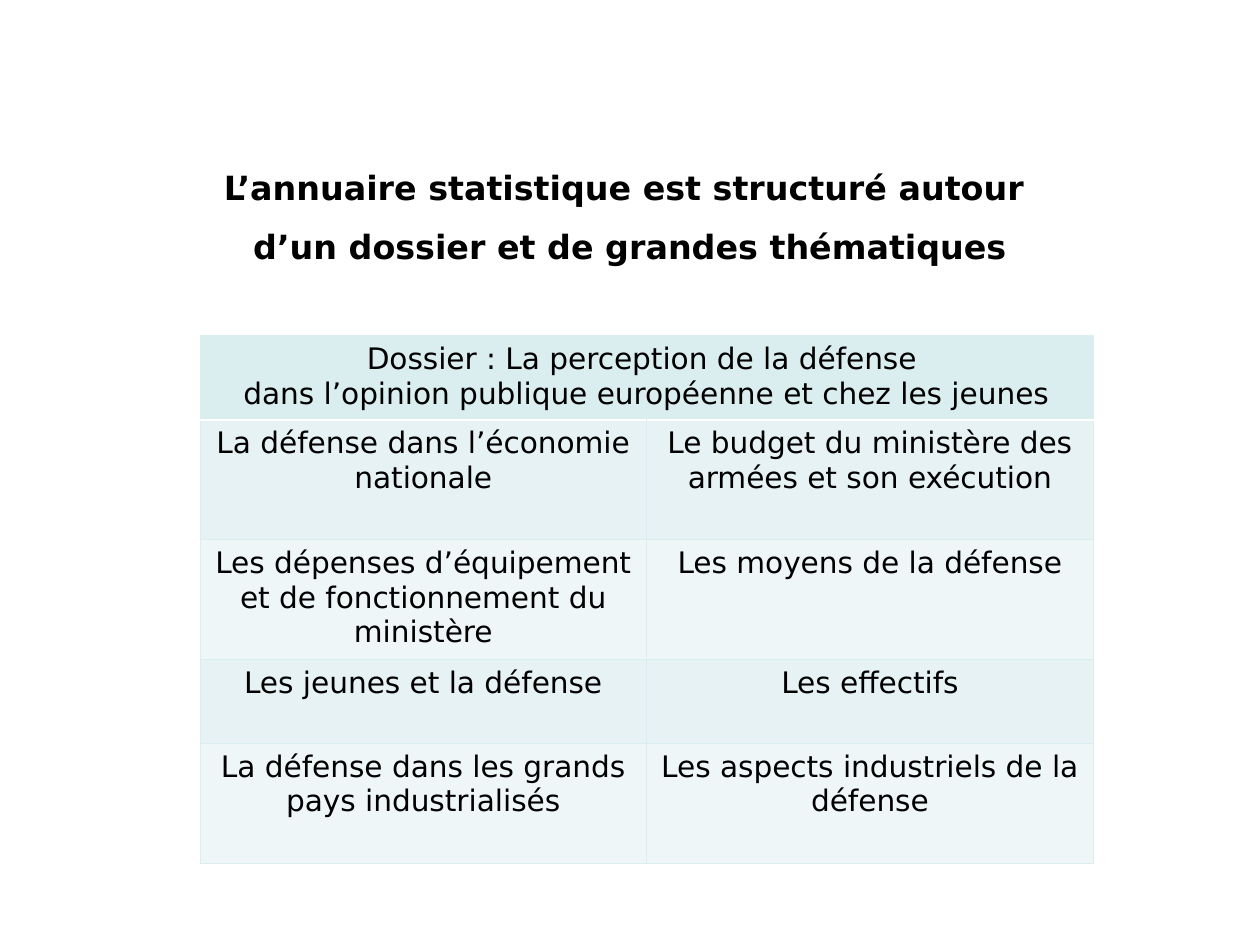
import pptx
import pptx.dml.color
import pptx.enum.text
import pptx.oxml
import pptx.oxml.ns
import pptx.util

WIDTH, HEIGHT = 9.45, 7.09
FONT = "DejaVu Sans"
MINT = "DAEDEF"
BAND_FILLS = ["E6F2F4", "EEF6F8"]
ROW_HEIGHTS = [0.63, 0.9, 0.9, 0.63, 0.9]
TITLE = ["L’annuaire statistique est structuré autour ",
         "d’un dossier et de grandes thématiques"]
DOSSIER = ("Dossier : La perception de la défense \v"
           "dans l’opinion publique européenne et chez les jeunes")
THEMES = [
    ["La défense dans l’économie nationale",
     "Le budget du ministère des armées et son exécution"],
    ["Les dépenses d’équipement et de fonctionnement du ministère",
     "Les moyens de la défense"],
    ["Les jeunes et la défense", "Les effectifs"],
    ["La défense dans les grands pays industrialisés",
     "Les aspects industriels de la défense"],
]


def colour(value):
    return pptx.dml.color.RGBColor.from_string(value)


def place(shape, left, top, width, height):
    shape.left, shape.width = (pptx.util.Inches(WIDTH * share) for share in (left, width))
    shape.top, shape.height = (pptx.util.Inches(HEIGHT * share) for share in (top, height))


def style_paragraph(paragraph, size, bold=False):
    paragraph.alignment = pptx.enum.text.PP_ALIGN.CENTER
    paragraph.font.name = FONT
    paragraph.font.size = pptx.util.Pt(size)
    paragraph.font.bold = bold
    paragraph.font.color.rgb = colour("000000")


def add_title(page, lines):
    title = page.shapes.title
    place(title, 0.08, 0.17, 0.84, 0.12)
    frame = title.text_frame
    frame.word_wrap = True
    frame.auto_size = pptx.enum.text.MSO_AUTO_SIZE.NONE
    frame.vertical_anchor = pptx.enum.text.MSO_ANCHOR.TOP
    frame.text = "\n".join(lines)
    for index, paragraph in enumerate(frame.paragraphs):
        paragraph.space_before = pptx.util.Pt(10 if index else 0)
        style_paragraph(paragraph, 18, bold=True)


def set_border(cell, side, value, points):
    properties = cell._tc.get_or_add_tcPr()
    line = pptx.oxml.parse_xml(
        f'<a:{side} {pptx.oxml.ns.nsdecls("a")} w="{pptx.util.Pt(points)}">'
        f'<a:solidFill><a:srgbClr val="{value}"/></a:solidFill></a:{side}>')
    properties.append(line)


def format_cell(cell, row):
    for side in ("lnL", "lnR", "lnT", "lnB"):
        under_header = (row, side) in ((0, "lnB"), (1, "lnT"))
        set_border(cell, side, "FFFFFF" if under_header else MINT, 1 if under_header else 0.5)
    cell.fill.solid()
    cell.fill.fore_color.rgb = colour(BAND_FILLS[(row - 1) % 2] if row else MINT)
    for paragraph in cell.text_frame.paragraphs:
        style_paragraph(paragraph, 16)


def add_theme_table(page, header, themes):
    rows = [[header, ""]] + themes
    frame = page.shapes.add_table(len(rows), 2, 0, 0, 0, 0)
    table = frame.table
    table.first_row = table.horz_banding = False
    for column in table.columns:
        column.width = pptx.util.Inches(3.35)
    for row, (height, texts) in enumerate(zip(ROW_HEIGHTS, rows)):
        table.rows[row].height = pptx.util.Inches(height)
        for column, text in enumerate(texts):
            cell = table.cell(row, column)
            cell.text = text
            format_cell(cell, row)
    table.cell(0, 0).merge(table.cell(0, 1))
    place(frame, 1.5 / WIDTH, 2.52 / HEIGHT, 6.7 / WIDTH, sum(ROW_HEIGHTS) / HEIGHT)


def main():
    deck = pptx.Presentation()
    deck.slide_width = pptx.util.Inches(WIDTH)
    deck.slide_height = pptx.util.Inches(HEIGHT)
    page = deck.slides.add_slide(deck.slide_layouts.get_by_name("Title Only"))
    add_title(page, TITLE)
    add_theme_table(page, DOSSIER, THEMES)
    deck.save("out.pptx")


if __name__ == "__main__":
    main()
